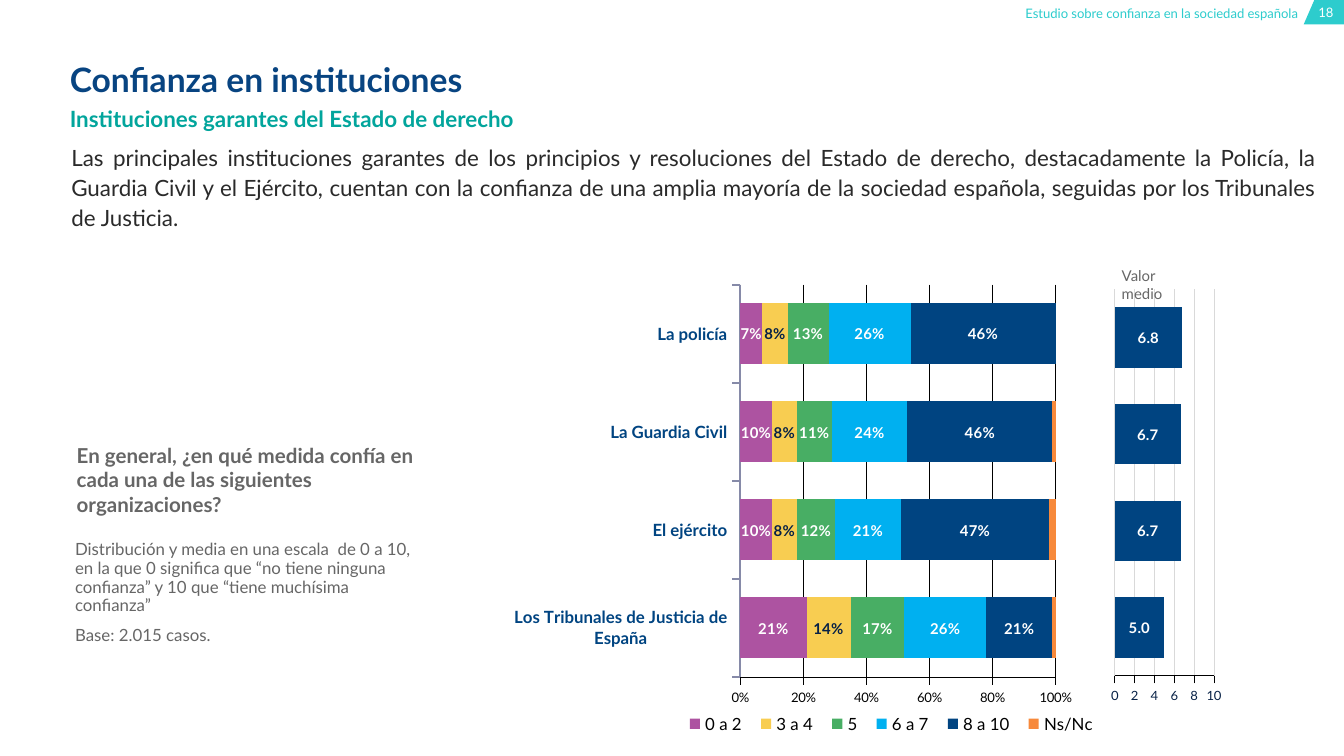
from dataclasses import dataclass

from lxml import etree
from pptx import Presentation
from pptx.chart.data import CategoryChartData
from pptx.dml.color import RGBColor
from pptx.enum.chart import (XL_CHART_TYPE, XL_LABEL_POSITION,
                             XL_LEGEND_POSITION, XL_TICK_MARK)
from pptx.enum.text import PP_ALIGN
from pptx.oxml.ns import qn
from pptx.util import Cm, Pt

STACKED, CLUSTERED = XL_CHART_TYPE.BAR_STACKED, XL_CHART_TYPE.BAR_CLUSTERED
CENTER, RIGHT, JUSTIFY = PP_ALIGN.CENTER, PP_ALIGN.RIGHT, PP_ALIGN.JUSTIFY
LABEL_CENTER = XL_LABEL_POSITION.CENTER
LEGEND_BOTTOM = XL_LEGEND_POSITION.BOTTOM
TICK_OUT, TICK_NONE = XL_TICK_MARK.OUTSIDE, XL_TICK_MARK.NONE


@dataclass(frozen=True)
class Theme:
    font: str = "Lato"
    white: str = "FFFFFF"
    black: str = "000000"
    navy: str = "072146"
    blue: str = "004481"
    title_blue: str = "084481"
    aqua: str = "2DCCCD"
    teal: str = "02A59C"
    ink: str = "2A2A2A"
    grey: str = "666666"
    grid: str = "D9D9D9"
    axis: str = "868AA8"
    tiny: int = 7
    small: int = 8
    normal: int = 9
    question: int = 11
    body: int = 12
    title: int = 18


T = Theme()

INSTITUTIONS = ["Los Tribunales de Justicia de España", "El ejército",
                "La Guardia Civil", "La policía"]
# name, values, fill, label colour (None: no labels)
ANSWERS = [
    ("0 a 2", (0.21, 0.10, 0.10, 0.07), "AD53A1", T.white),
    ("3 a 4", (0.14, 0.08, 0.08, 0.08), "F8CD51", T.navy),
    ("5", (0.17, 0.12, 0.11, 0.13), "48AE64", T.white),
    ("6 a 7", (0.26, 0.21, 0.24, 0.26), "00B0F0", T.white),
    ("8 a 10", (0.21, 0.47, 0.46, 0.46), T.blue, T.white),
    ("Ns/Nc", (0.01, 0.02, 0.01, 0), "F7893B", None),
]
MEANS = [("Valor medio", (5.0, 6.7, 6.7, 6.8), T.blue, T.white)]


def rgb(value):
    return RGBColor.from_string(value)


def style_font(font, size, color, bold=False):
    font.name, font.size, font.bold = T.font, Pt(size), bold
    font.color.rgb = rgb(color)


def add_text(s, box, text, size, color, bold=False, align=None,
             spacing=None, gap=0, inset=(0, 0)):
    """Text box; each line of text is a paragraph, spacing and gap in points."""
    tf = s.shapes.add_textbox(*map(Cm, box)).text_frame
    tf.word_wrap = True
    tf.margin_left = tf.margin_right = Cm(inset[0])
    tf.margin_top = tf.margin_bottom = Cm(inset[1])
    tf.text = text
    for p in tf.paragraphs:
        p.alignment = align
        p.space_before = p.space_after = Pt(gap)
        if spacing:
            p.line_spacing = Pt(spacing)
        for r in p.runs:
            style_font(r.font, size, color, bold)


def add_page_tab(s):
    builder = s.shapes.build_freeform(Cm(24.84), 0)
    builder.add_line_segments([(Cm(25.4), 0), (Cm(25.4), Cm(0.46)),
                               (Cm(24.64), Cm(0.46))])
    sp = builder.convert_to_shape()
    sp.shadow.inherit = False
    sp.fill.solid()
    sp.fill.fore_color.rgb = rgb(T.aqua)
    sp.line.fill.background()


def set_layout(parent, index, inner, **fractions):
    """Place a plot area or legend by fractions of its chart."""
    for old in parent.findall(qn("c:layout")):
        parent.remove(old)
    layout = etree.Element(qn("c:layout"))
    manual = etree.SubElement(layout, qn("c:manualLayout"))
    if inner:
        etree.SubElement(manual, qn("c:layoutTarget")).set("val", "inner")
    for tag in ("xMode", "yMode"):
        etree.SubElement(manual, qn(f"c:{tag}")).set("val", "edge")
    for tag, value in fractions.items():
        etree.SubElement(manual, qn(f"c:{tag}")).set("val", str(value))
    parent.insert(index, layout)


def style_line(line, color, width):
    line.color.rgb = rgb(color)
    line.width = Pt(width)


def style_value_axis(axis, top, step, number_format, color, grid):
    axis.minimum_scale, axis.maximum_scale, axis.major_unit = 0, top, step
    axis.major_tick_mark, axis.minor_tick_mark = TICK_OUT, TICK_NONE
    axis.has_major_gridlines = True
    style_line(axis.major_gridlines.format.line, grid, 0.25)
    style_line(axis.format.line, T.black, 0.25)
    labels = axis.tick_labels
    labels.number_format, labels.number_format_is_linked = number_format, False
    style_font(labels.font, T.tiny, color)


def add_bar_chart(s, kind, box, rows, number_format, plot_box):
    data = CategoryChartData(number_format=number_format)
    data.categories = INSTITUTIONS
    for name, values, *_ in rows:
        data.add_series(name, values)
    chart = s.shapes.add_chart(kind, *map(Cm, box), data).chart
    chart.has_title = chart.has_legend = False
    style_font(chart.font, T.small, T.black)
    plot = chart.plots[0]
    plot.gap_width, plot.vary_by_categories = 60, False
    for series, (*_, fill, label_color) in zip(plot.series, rows):
        series.format.fill.solid()
        series.format.fill.fore_color.rgb = rgb(fill)
        if label_color:
            labels = series.data_labels
            labels.show_value, labels.position = True, LABEL_CENTER
            labels.number_format = number_format
            labels.number_format_is_linked = False
            style_font(labels.font, T.small, label_color, bold=True)
    x, y, w, h = plot_box
    set_layout(chart._chartSpace.chart.plotArea, 0, True, x=x, y=y, w=w, h=h)
    return chart


def add_means_chart(s):
    chart = add_bar_chart(s, CLUSTERED, (17.58, 5.31, 5.94, 7.98), MEANS,
                          "#,##0.0", (0.587, 0.02, 0.316, 0.942))
    chart.category_axis.visible = False
    style_value_axis(chart.value_axis, 10, 2, "#,##0", T.navy, T.grid)


def add_answers_chart(s):
    chart = add_bar_chart(s, STACKED, (9.47, 3.66, 13.79, 10.54), ANSWERS,
                          "0%", (0.328, 0.163, 0.432, 0.703))
    chart.plots[0].overlap = 100
    axis = chart.category_axis
    axis.major_tick_mark, axis.minor_tick_mark = TICK_OUT, TICK_NONE
    style_line(axis.format.line, T.axis, 1)
    style_font(axis.tick_labels.font, T.normal, T.blue, bold=True)
    style_value_axis(chart.value_axis, 1, 0.2, "0%", T.black, T.black)
    chart.has_legend = True
    legend = chart.legend
    legend.position, legend.include_in_layout = LEGEND_BOTTOM, False
    style_font(legend.font, T.normal, T.black)
    set_layout(legend._element, 1, False, x=0.24, y=0.92, w=0.59, h=0.06)


def main():
    prs = Presentation()
    prs.slide_width, prs.slide_height = Cm(25.4), Cm(14.28)
    s = prs.slides.add_slide(prs.slide_layouts[6])

    add_page_tab(s)
    add_text(s, (24.77, 0.08, 0.58, 0.3), "18", T.tiny, T.white, align=CENTER)
    add_text(s, (17.37, 0.1, 7.16, 0.3),
             "Estudio sobre confianza en la sociedad española",
             T.tiny, T.aqua, align=RIGHT)

    add_means_chart(s)
    add_answers_chart(s)

    add_text(s, (1.32, 1.12, 19.13, 0.94), "Confianza en instituciones",
             T.title, T.title_blue, bold=True)
    add_text(s, (1.32, 1.93, 19.74, 0.61),
             "Instituciones garantes del Estado de derecho",
             T.body, T.teal, bold=True, inset=(0, 0.05))
    add_text(s, (1.35, 2.67, 23.54, 1.7),
             "Las principales instituciones garantes de los principios y "
             "resoluciones del Estado de derecho, destacadamente la Policía, "
             "la Guardia Civil y el Ejército, cuentan con la confianza de una "
             "amplia mayoría de la sociedad española, seguidas por los "
             "Tribunales de Justicia.",
             T.body, T.ink, align=JUSTIFY, spacing=16, gap=6)
    add_text(s, (20.95, 4.9, 1.8, 0.93), "Valor medio", T.small, T.grey,
             inset=(0.25, 0.13))
    add_text(s, (1.45, 8.36, 7, 1.4),
             "En general, ¿en qué medida confía en cada una de las siguientes "
             "organizaciones?", T.question, T.grey, bold=True)
    add_text(s, (1.42, 10.21, 6.38, 2),
             "Distribución y media en una escala  de 0 a 10, en la que 0 "
             "significa que “no tiene ninguna confianza” y 10 que “tiene "
             "muchísima confianza”\nBase: 2.015 casos.",
             T.normal, T.grey, spacing=10, gap=3)

    prs.save("out.pptx")


if __name__ == "__main__":
    main()
